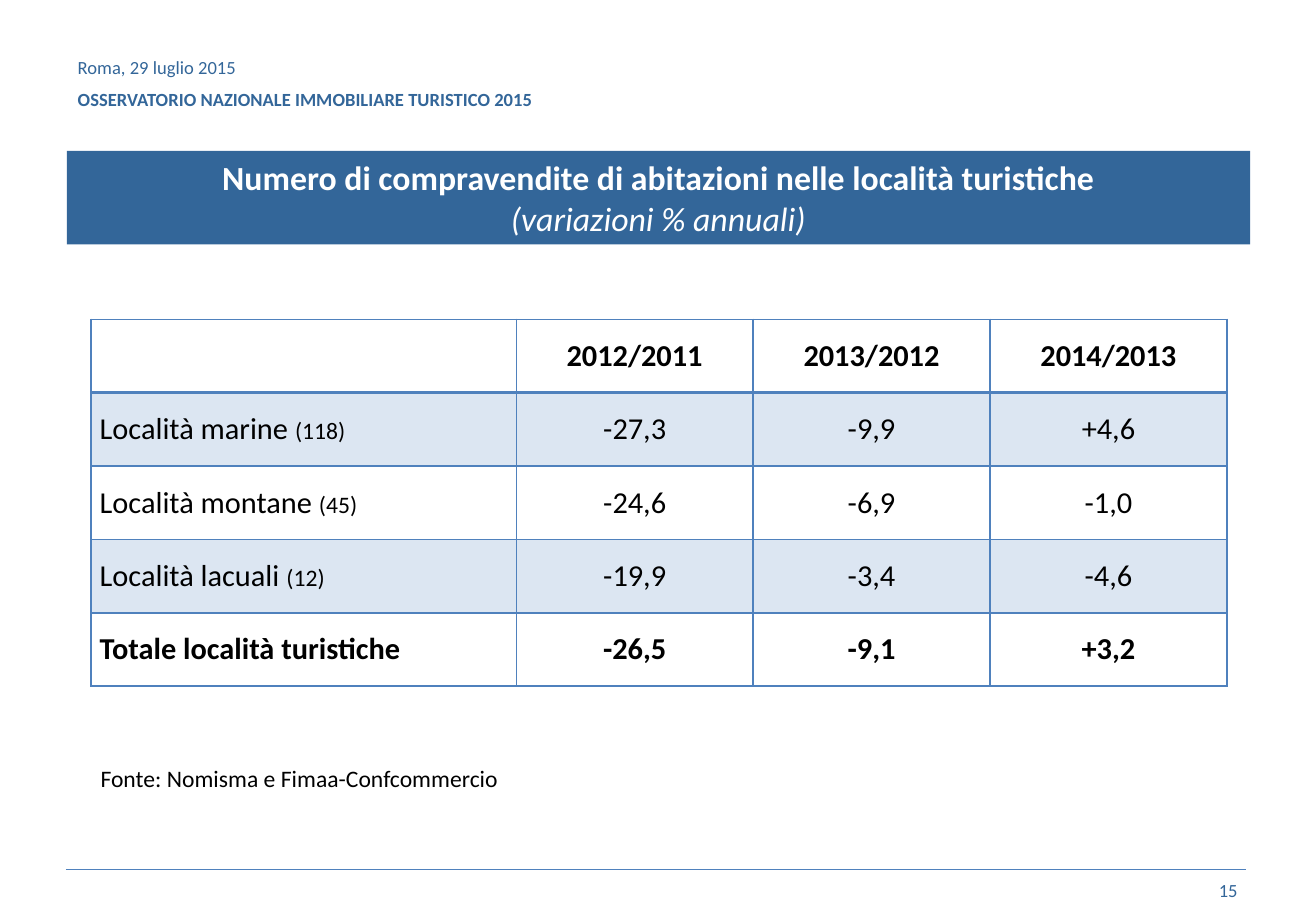
from lxml import etree
from pptx import Presentation
from pptx.dml.color import RGBColor
from pptx.enum.shapes import MSO_CONNECTOR, MSO_SHAPE
from pptx.enum.text import MSO_ANCHOR, PP_ALIGN
from pptx.oxml import parse_xml
from pptx.oxml.ns import nsdecls, qn
from pptx.util import Pt

RECT = MSO_SHAPE.RECTANGLE
LINE = MSO_CONNECTOR.STRAIGHT
TOP, MIDDLE = MSO_ANCHOR.TOP, MSO_ANCHOR.MIDDLE
LEFT, CENTER, RIGHT = PP_ALIGN.LEFT, PP_ALIGN.CENTER, PP_ALIGN.RIGHT

SCALE = 3810  # EMU per px, 240 px per inch
FONT = "Calibri"
COLORS = {
    "brand": "336699",
    "grid": "4F81BD",
    "band": "DCE6F2",
    "text": "000000",
    "white": "FFFFFF",
}
YEARS = ["2012/2011", "2013/2012", "2014/2013"]
SALES = [
    ("Località marine ", "(118)", ["-27,3", "-9,9", "+4,6"]),
    ("Località montane ", "(45)", ["-24,6", "-6,9", "-1,0"]),
    ("Località lacuali ", "(12)", ["-19,9", "-3,4", "-4,6"]),
    ("Totale località turistiche", "", ["-26,5", "-9,1", "+3,2"]),
]
COLS = [840, 468, 468, 468]
ROW = 145


def px(*sizes):
    return [size * SCALE for size in sizes]


def color(name):
    return RGBColor.from_string(COLORS[name])


def add_run(para, text, size, tint="text", bold=False, italic=False):
    run = para.add_run()
    run.text = text
    font = run.font
    font.name, font.size = FONT, Pt(size)
    font.bold, font.italic = bold, italic
    font.color.rgb = color(tint)


def add_text(slide, box, anchor=TOP, align=LEFT):
    """Add an empty wrapping text box and return its text frame."""
    frame = slide.shapes.add_textbox(*px(*box)).text_frame
    frame.word_wrap = True
    frame.vertical_anchor = anchor
    frame.paragraphs[0].alignment = align
    return frame


def add_rule(slide, ends):
    rule = slide.shapes.add_connector(LINE, *px(*ends))
    rule.line.color.rgb = color("grid")
    rule.line.width = Pt(0.25)
    props = rule._element.spPr
    etree.SubElement(props, qn("a:effectLst"))


def add_banner(slide, box, title, note):
    banner = slide.shapes.add_shape(RECT, *px(*box))
    banner.shadow.inherit = False
    banner.fill.solid()
    banner.fill.fore_color.rgb = color("brand")
    banner.line.fill.background()
    frame = banner.text_frame
    frame.word_wrap = True
    frame.vertical_anchor = MIDDLE
    para = frame.paragraphs[0]
    para.alignment = CENTER
    add_run(para, title, 20, "white", bold=True)
    para.add_line_break()
    add_run(para, note, 20, "white", italic=True)


def set_edges(cell, widths):
    """Draw the left, right, top and bottom borders, widths in points."""
    props = cell._tc.get_or_add_tcPr()
    for spot, (side, width) in enumerate(zip("LRTB", widths)):
        edge = parse_xml(
            f'<a:ln{side} {nsdecls("a")} w="{Pt(width)}"><a:solidFill>'
            f'<a:srgbClr val="{COLORS["grid"]}"/></a:solidFill></a:ln{side}>')
        props.insert(spot, edge)


def style_cell(cell, row, col):
    cell.vertical_anchor = MIDDLE
    cell.margin_left, cell.margin_right = px(17, 17)
    cell.margin_top = cell.margin_bottom = 0
    if row % 2:
        cell.fill.solid()
        cell.fill.fore_color.rgb = color("band")
    else:
        cell.fill.background()
    set_edges(cell, [1, 1, 2 if row == 1 else 1, 2 if row == 0 else 1])
    para = cell.text_frame.paragraphs[0]
    para.alignment = CENTER if col else LEFT
    para.font.size = Pt(18)
    return para


def add_grid(slide, left, top):
    rows = [("", "", YEARS)] + SALES
    box = px(left, top, sum(COLS), ROW * len(rows))
    table = slide.shapes.add_table(len(rows), len(COLS), *box).table
    table.first_row = table.horz_banding = False
    for col, width in zip(table.columns, px(*COLS)):
        col.width = width
    for at, (place, count, values) in enumerate(rows):
        table.rows[at].height = ROW * SCALE
        bold = at in (0, len(rows) - 1)
        for col, text in enumerate([place, *values]):
            para = style_cell(table.cell(at, col), at, col)
            if text:
                add_run(para, text, 18, bold=bold)
            if count and col == 0:
                add_run(para, count, 14)


def main():
    deck = Presentation()
    deck.slide_width, deck.slide_height = px(2600, 1800)
    slide = deck.slides.add_slide(deck.slide_layouts[6])

    add_rule(slide, (130, 1718, 2462, 1718))
    head = add_text(slide, (130, 72, 1927, 185), MIDDLE)
    add_run(head.paragraphs[0], "Roma, 29 luglio 2015", 11, "brand")
    event = head.add_paragraph()
    event.space_before = Pt(6)
    add_run(event, "OSSERVATORIO NAZIONALE IMMOBILIARE TURISTICO 2015",
            11, "brand", bold=True)

    credit = add_text(slide, (175, 1498, 1027, 82))
    add_run(credit.paragraphs[0], "Fonte: Nomisma e Fimaa-Confcommercio", 14)
    number = add_text(slide, (1862, 1711, 607, 96), MIDDLE, RIGHT)
    add_run(number.paragraphs[0], "15", 11, "brand")

    add_banner(slide, (132, 298, 2338, 185),
               "Numero di compravendite di abitazioni nelle località turistiche",
               "(variazioni % annuali)")
    add_grid(slide, 180, 631)
    deck.save("out.pptx")


if __name__ == "__main__":
    main()
